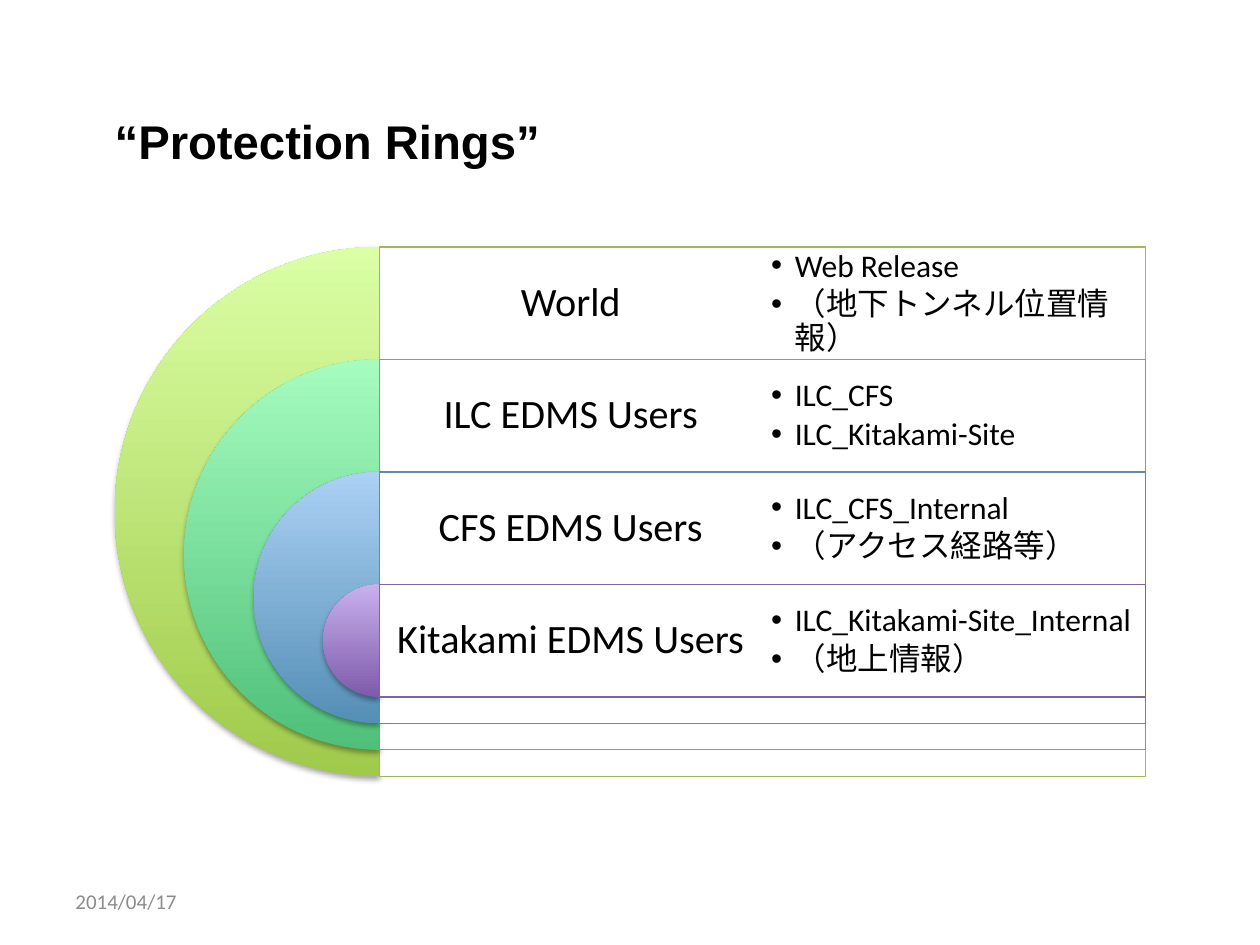
"""Build the "Protection Rings" slide: nested half rings with labelled access levels."""
from dataclasses import dataclass

from lxml.etree import SubElement
from pptx import Presentation
from pptx.dml.color import RGBColor
from pptx.enum.shapes import MSO_SHAPE
from pptx.enum.text import MSO_ANCHOR, PP_ALIGN
from pptx.oxml.ns import qn
from pptx.slide import Slide
from pptx.text.text import TextFrame, _Paragraph
from pptx.util import Pt


@dataclass(frozen=True)
class Theme:
    head_font: str = "Arial"
    body_font: str = "Calibri"
    title_size: float = 27
    label_size: float = 23
    item_size: float = 18
    date_size: float = 12
    text: str = "000000"
    muted: str = "8C8C8C"
    panel: str = "FFFFFF"
    shadow: str = "000000"


@dataclass(frozen=True)
class Ring:
    label: str
    items: tuple[str, ...]
    dark: str
    light: str
    line: str


@dataclass(frozen=True)
class Box:
    x: float
    y: float
    w: float
    h: float

    def lengths(self) -> tuple[Pt, Pt, Pt, Pt]:
        return Pt(self.x), Pt(self.y), Pt(self.w), Pt(self.h)


THEME = Theme()
AXIS_X, TOP = 216.8, 141.1
ROW_H, BOTTOM_STEP = 64.3, 15.1
COL_W = 218.9
INDENT = 13.5

RINGS = (
    Ring("World", ("Web Release", "（地下トンネル位置情報）"), "A0CA4A", "DAFFA5", "9BBB59"),
    Ring("ILC EDMS Users", ("ILC_CFS", "ILC_Kitakami-Site"), "4FC079", "A5FCBE", "5CB37C"),
    Ring("CFS EDMS Users", ("ILC_CFS_Internal", "（アクセス経路等）"), "558EB6", "ABD1F4", "608CAB"),
    Ring("Kitakami EDMS Users", ("ILC_Kitakami-Site_Internal", "（地上情報）"),
         "7F5BAB", "C8B0ED", "8064A2"),
)


def rgb(value: str) -> RGBColor:
    return RGBColor.from_string(value)


def add_text_box(s: Slide, box: Box, inset_x: float, inset_y: float) -> TextFrame:
    tf = s.shapes.add_textbox(*box.lengths()).text_frame
    tf.word_wrap = True
    tf.vertical_anchor = MSO_ANCHOR.MIDDLE
    tf.margin_left = tf.margin_right = Pt(inset_x)
    tf.margin_top = tf.margin_bottom = Pt(inset_y)
    return tf


def add_run(p: _Paragraph, text: str, size: float, color: str = THEME.text,
            font: str = THEME.body_font, bold: bool = False) -> None:
    r = p.add_run()
    r.text = text
    r.font.name, r.font.size, r.font.bold = font, Pt(size), bold
    r.font.color.rgb = rgb(color)


def add_half_disc(s: Slide, box: Box, ring: Ring) -> None:
    sp = s.shapes.add_shape(MSO_SHAPE.PIE, *box.lengths())
    sp.adjustments[0], sp.adjustments[1] = 54, 162
    sp.line.fill.background()
    sp.fill.gradient()
    sp.fill.gradient_angle = 90
    for stop, color in zip(sp.fill.gradient_stops, (ring.dark, ring.light)):
        stop.color.rgb = rgb(color)
    sp.shadow.inherit = False
    effects = sp._element.spPr.find(qn("a:effectLst"))
    shadow = SubElement(effects, qn("a:outerShdw"), blurRad=str(Pt(3.1)),
                        dist=str(Pt(1.8)), dir="5400000", rotWithShape="0")
    color = SubElement(shadow, qn("a:srgbClr"), val=THEME.shadow)
    SubElement(color, qn("a:alpha"), val="35000")


def add_panel(s: Slide, box: Box, line: str) -> None:
    sp = s.shapes.add_shape(MSO_SHAPE.RECTANGLE, *box.lengths())
    sp.shadow.inherit = False
    sp.fill.solid()
    sp.fill.fore_color.rgb = rgb(THEME.panel)
    color = sp._element.spPr.find(qn("a:solidFill")).find(qn("a:srgbClr"))
    SubElement(color, qn("a:alpha"), val="90000")
    sp.line.color.rgb = rgb(line)
    sp.line.width = Pt(0.75)


def add_label(s: Slide, box: Box, text: str) -> None:
    p = add_text_box(s, box, 7, 7).paragraphs[0]
    p.alignment = PP_ALIGN.CENTER
    p.line_spacing = 0.9
    add_run(p, text, THEME.label_size)


def add_items(s: Slide, box: Box, items: tuple[str, ...]) -> None:
    tf = add_text_box(s, box, 5, 5)
    for i, item in enumerate(items):
        p = tf.paragraphs[0] if i == 0 else tf.add_paragraph()
        p.level = 1
        p.line_spacing = 0.9
        p.space_after = Pt(2.7)
        pPr = p._p.get_or_add_pPr()
        pPr.set("marL", str(Pt(INDENT)))
        pPr.set("indent", str(-Pt(INDENT)))
        SubElement(pPr, qn("a:buFont"), typeface=THEME.head_font)
        SubElement(pPr, qn("a:buChar"), char="•")
        add_run(p, item, THEME.item_size)


def add_ring(s: Slide, index: int, ring: Ring) -> None:
    y = TOP + index * ROW_H
    d = ROW_H + (len(RINGS) - 1 - index) * (ROW_H + BOTTOM_STEP)
    add_half_disc(s, Box(AXIS_X - d / 2, y, d, d), ring)
    add_panel(s, Box(AXIS_X, y, 2 * COL_W, d), ring.line)
    add_label(s, Box(AXIS_X, y, COL_W, ROW_H), ring.label)


def main() -> None:
    prs = Presentation()
    prs.slide_width, prs.slide_height = Pt(720), Pt(540)
    s = prs.slides.add_slide(prs.slide_layouts[6])
    for i, ring in enumerate(RINGS):
        add_ring(s, i, ring)
    for i, ring in enumerate(RINGS):
        add_items(s, Box(AXIS_X + COL_W, TOP + i * ROW_H, COL_W, ROW_H), ring.items)
    title = add_text_box(s, Box(65.5, 60.5, 589, 39.6), 0, 0)
    add_run(title.paragraphs[0], "“Protection Rings”", THEME.title_size,
            font=THEME.head_font, bold=True)
    date = add_text_box(s, Box(36, 500.5, 168, 28.8), 7.2, 3.6)
    add_run(date.paragraphs[0], "2014/04/17", THEME.date_size, THEME.muted)
    prs.save("out.pptx")


if __name__ == "__main__":
    main()
